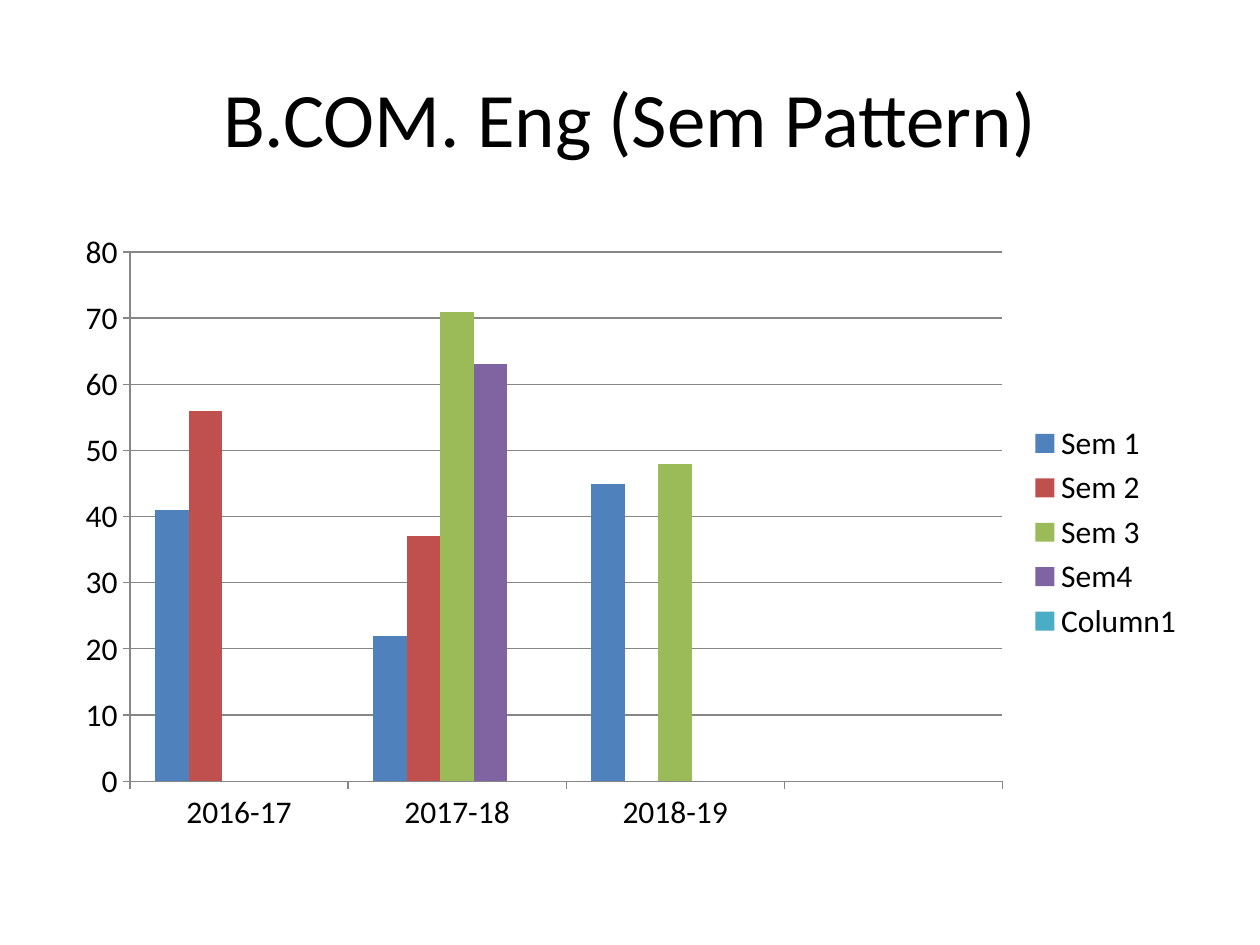
from dataclasses import dataclass
from typing import Optional

from pptx import Presentation
from pptx.chart.data import CategoryChartData
from pptx.dml.color import RGBColor
from pptx.enum.chart import XL_CHART_TYPE, XL_LEGEND_POSITION, XL_TICK_MARK
from pptx.enum.text import MSO_ANCHOR, PP_ALIGN
from pptx.util import Inches, Pt

FONT = "Calibri"
BLACK = RGBColor(0x00, 0x00, 0x00)
GRAY = RGBColor(0x86, 0x86, 0x86)
BLUE = RGBColor(0x4F, 0x81, 0xBD)
RED = RGBColor(0xC0, 0x50, 0x4D)
GREEN = RGBColor(0x9B, 0xBB, 0x59)
PURPLE = RGBColor(0x80, 0x64, 0xA2)
TEAL = RGBColor(0x4B, 0xAC, 0xC6)


@dataclass
class Semester:
    name: str
    values: tuple[Optional[int], ...]
    color: RGBColor


YEARS = ("2016-17", "2017-18", "2018-19", "")
SEMESTERS = (
    Semester("Sem 1", (41, 22, 45, None), BLUE),
    Semester("Sem 2", (56, 37, None, None), RED),
    Semester("Sem 3", (None, 71, 48, None), GREEN),
    Semester("Sem4", (None, 63, None, None), PURPLE),
    Semester("Column1", (None, None, None, None), TEAL),
)


def style_font(font, size: int) -> None:
    font.name = FONT
    font.size = Pt(size)
    font.color.rgb = BLACK


def style_line(line) -> None:
    line.color.rgb = GRAY
    line.width = Pt(0.75)


def add_title(s, text: str) -> None:
    tf = s.shapes.add_textbox(Inches(0.5), Inches(0.3), Inches(9), Inches(1.25)).text_frame
    tf.word_wrap = True
    tf.vertical_anchor = MSO_ANCHOR.MIDDLE
    tf.text = text
    p = tf.paragraphs[0]
    p.alignment = PP_ALIGN.CENTER
    style_font(p.runs[0].font, 44)


def add_results_chart(s, semesters: tuple[Semester, ...]) -> None:
    data = CategoryChartData()
    data.categories = YEARS
    for semester in semesters:
        data.add_series(semester.name, semester.values)
    chart = s.shapes.add_chart(
        XL_CHART_TYPE.COLUMN_CLUSTERED,
        Inches(0.5), Inches(1.75), Inches(9), Inches(4.95), data,
    ).chart
    style_font(chart.font, 18)
    chart.has_title = False
    chart.has_legend = True
    chart.legend.position = XL_LEGEND_POSITION.RIGHT
    chart.legend.include_in_layout = False

    plot = chart.plots[0]
    plot.gap_width = 150
    plot.vary_by_categories = False
    for series, semester in zip(plot.series, semesters):
        series.format.fill.solid()
        series.format.fill.fore_color.rgb = semester.color

    for axis in (chart.category_axis, chart.value_axis):
        axis.major_tick_mark = XL_TICK_MARK.OUTSIDE
        style_line(axis.format.line)
    value_axis = chart.value_axis
    value_axis.minimum_scale = 0
    value_axis.maximum_scale = 80
    value_axis.major_unit = 10
    style_line(value_axis.major_gridlines.format.line)


def main() -> None:
    prs = Presentation()
    prs.slide_width = Inches(10)
    prs.slide_height = Inches(7.5)
    s = prs.slides.add_slide(prs.slide_layouts[6])
    add_title(s, "B.COM. Eng (Sem Pattern)")
    add_results_chart(s, SEMESTERS)
    prs.save("out.pptx")


if __name__ == "__main__":
    main()
